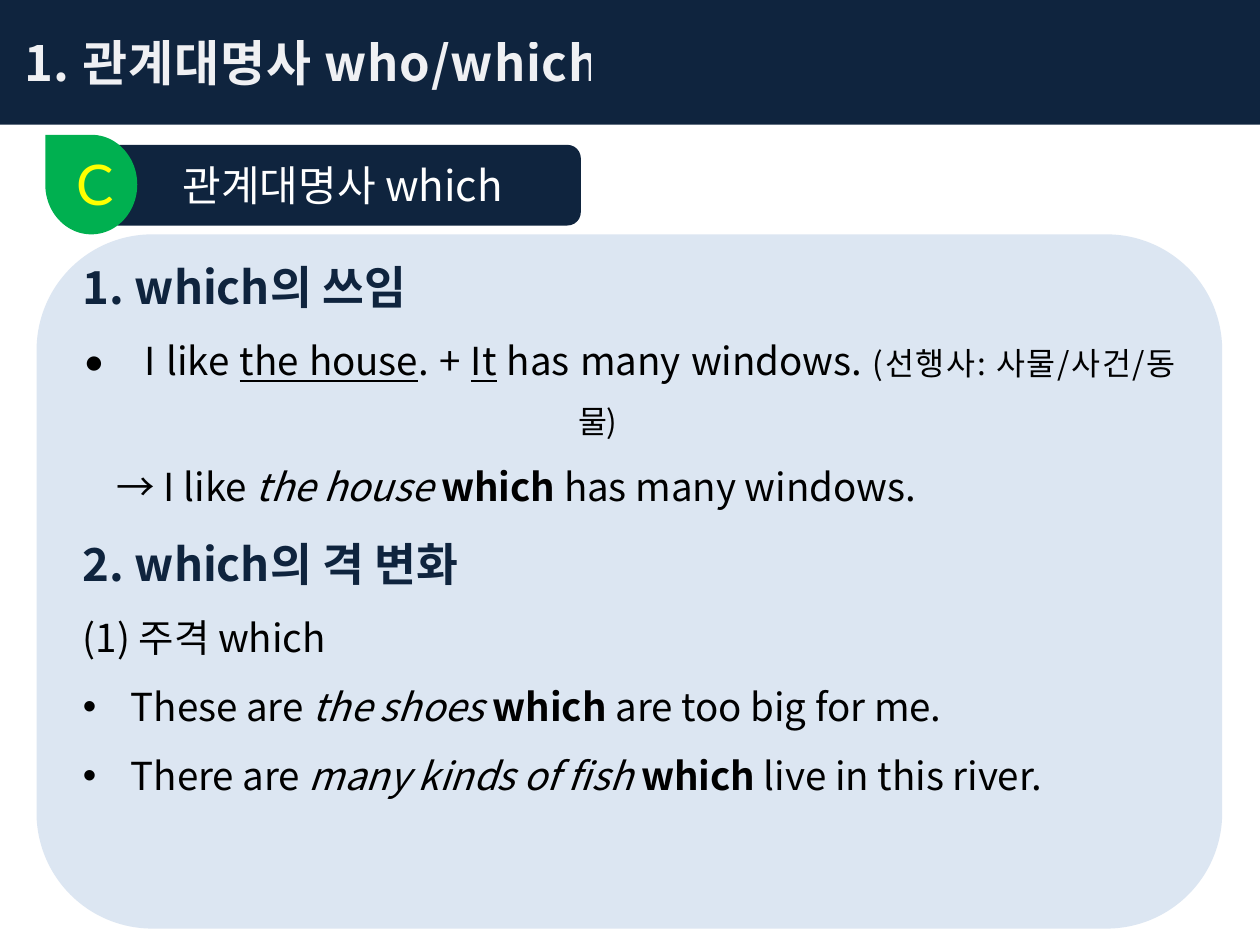
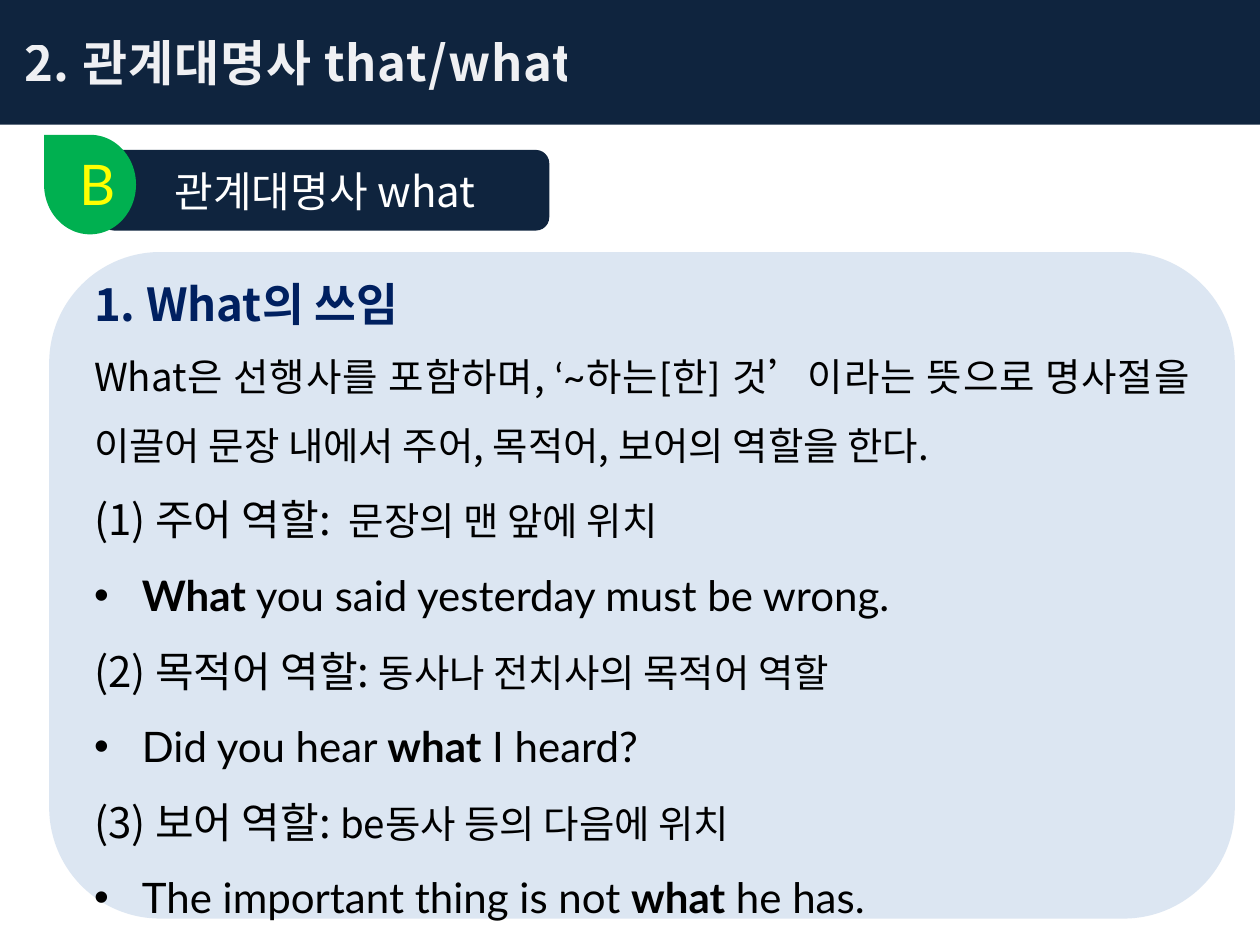
from lxml import etree
from pptx import Presentation
from pptx.dml.color import RGBColor
from pptx.enum.shapes import MSO_SHAPE
from pptx.enum.text import MSO_ANCHOR, PP_ALIGN
from pptx.oxml.ns import qn
from pptx.util import Inches, Pt

RECTANGLE = MSO_SHAPE.RECTANGLE
ROUNDED = MSO_SHAPE.FLOWCHART_ALTERNATE_PROCESS
TEARDROP = MSO_SHAPE.TEAR
MIDDLE = MSO_ANCHOR.MIDDLE
LEFT, CENTER, JUSTIFY = PP_ALIGN.LEFT, PP_ALIGN.CENTER, PP_ALIGN.JUSTIFY

KOREAN_FONT, LATIN_FONT = "Noto Sans CJK KR", "Lato"
NAVY, HEADING_BLUE, PANEL_BLUE = "0F243E", "002060", "DCE6F2"
GREEN, YELLOW, WHITE, BLACK = "00B050", "FFFF00", "FFFFFF", "000000"
TITLE_WHITE, TITLE_OUTLINE = "FCFCFD", "101A26"

BOLD, ITALIC, UNDERLINE = {"bold": True}, {"italic": True}, {"underline": True}
LATIN = {"font": LATIN_FONT}
LATIN_BOLD = {**LATIN, **BOLD}


def rgb(value):
    return RGBColor.from_string(value)


def add_alpha(solid_fill, percent):
    etree.SubElement(solid_fill[0], qn("a:alpha"), val=str(percent * 1000))


class LessonDeck:
    """Holds the lesson style and the slide being built."""

    def __init__(self):
        self.presentation = Presentation()
        self.presentation.slide_width = Inches(10)
        self.presentation.slide_height = Inches(7.5)
        self.slide = None

    def new_slide(self):
        layout = self.presentation.slide_layouts[6]
        self.slide = self.presentation.slides.add_slide(layout)

    def shape(self, kind, box, color):
        shape = self.slide.shapes.add_shape(kind, *map(Inches, box))
        shape.shadow.inherit = False
        shape.fill.solid()
        shape.fill.fore_color.rgb = rgb(color)
        shape.line.fill.background()
        shape.text_frame.word_wrap = True
        shape.text_frame.vertical_anchor = MIDDLE
        return shape

    def run(self, paragraph, text, size, color=BLACK, font=KOREAN_FONT,
            bold=False, italic=False, underline=False, spacing=0):
        run = paragraph.add_run()
        run.text = text
        run.font.size = Pt(size)
        run.font.color.rgb = rgb(color)
        run.font.name = font
        run.font.bold = bold
        run.font.italic = italic
        run.font.underline = underline
        properties = run.font._element
        etree.SubElement(properties, qn("a:ea"), typeface=KOREAN_FONT)
        if spacing:
            properties.set("spc", str(int(spacing * 100)))
        return run

    def title(self, text):
        band = self.shape(RECTANGLE, (0, 0, 10, 0.99), NAVY)
        paragraph = band.text_frame.paragraphs[0]
        paragraph.alignment = LEFT
        run = self.run(paragraph, text, 28, TITLE_WHITE, bold=True, spacing=0.5)
        properties = run.font._element
        add_alpha(properties.find(qn("a:solidFill")), 95)
        outline = etree.Element(qn("a:ln"), w=str(Pt(1.06)))
        fill = etree.SubElement(outline, qn("a:solidFill"))
        etree.SubElement(fill, qn("a:srgbClr"), val=TITLE_OUTLINE)
        add_alpha(fill, 6)
        properties.insert(0, outline)

    def section(self, text, box):
        label = self.shape(ROUNDED, box, NAVY)
        paragraph = label.text_frame.paragraphs[0]
        paragraph.alignment = CENTER
        self.run(paragraph, text, 24, WHITE)

    def badge(self, letter, drop_left, letter_left):
        drop = self.shape(TEARDROP, (drop_left, 1.1, 0.79, 0.73), GREEN)
        drop.rotation = 270
        box = self.slide.shapes.add_textbox(
            *map(Inches, (letter_left, 1.14, 0.47, 0.64)))
        box.text_frame.word_wrap = True
        self.run(box.text_frame.paragraphs[0], letter, 32, YELLOW, LATIN_FONT)

    def panel(self, box, lines, bottom_inset=0.05):
        """Each line is (paragraph options, list of (text, run options))."""
        panel = self.shape(ROUNDED, box, PANEL_BLUE)
        frame = panel.text_frame
        frame.margin_bottom = Inches(bottom_inset)
        for index, (options, runs) in enumerate(lines):
            paragraph = frame.add_paragraph() if index else frame.paragraphs[0]
            self.format_paragraph(paragraph, **options)
            for text, style in runs:
                self.run(paragraph, text, **style)

    def format_paragraph(self, paragraph, alignment=JUSTIFY, margin=0,
                         hanging=0, bullet=False):
        paragraph.alignment = alignment
        paragraph.line_spacing = 1.5
        properties = paragraph._p.get_or_add_pPr()
        properties.set("marL", str(Inches(margin)))
        properties.set("indent", str(-Inches(hanging)))
        if bullet:
            etree.SubElement(properties, qn("a:buFont"), typeface="Arial")
            etree.SubElement(properties, qn("a:buChar"), char="•")
        else:
            etree.SubElement(properties, qn("a:buNone"))


def line(size, *parts, **options):
    """Parts are plain strings or (text, run options) pairs."""
    pairs = [(part, {}) if isinstance(part, str) else part for part in parts]
    return options, [(text, {"size": size, **style}) for text, style in pairs]


def heading(text, color):
    return line(26, (text, {"color": color, "bold": True}))


def bullet(size, *parts, alignment=JUSTIFY):
    return line(size, *parts, alignment=alignment, margin=0.38, hanging=0.38,
                bullet=True)


def role(name, explanation, gap=0):
    parts = [name + ":", (" ", {"spacing": gap}), (explanation, {"size": 22})]
    return line(24, *parts, alignment=LEFT)


def latin_example(before, pronoun, after):
    parts = [(before, LATIN), (pronoun, LATIN_BOLD), (after, LATIN)]
    return bullet(24, *[part for part in parts if part[0]], alignment=LEFT)


def build_which(deck):
    deck.new_slide()
    deck.title(" 1. 관계대명사 who/which")
    deck.panel((0.29, 1.86, 9.41, 5.51), [
        heading("1. which의 쓰임", NAVY),
        line(22, ("•", {**LATIN, "spacing": 8}), (" ", {**LATIN, "spacing": 8}),
             "I like ", ("the house", UNDERLINE), ". + ", ("It", UNDERLINE),
             " has many windows. ", ("(선행사: 사물/사건/동물)", {"size": 18}),
             margin=3.93, hanging=3.93),
        line(22, "→ I like ", ("the house ", ITALIC), ("which", BOLD),
             " has many windows.", margin=0.27),
        heading("2. which의 격 변화", NAVY),
        line(22, "(1) 주격 which"),
        bullet(22, "These are ", ("the shoes ", ITALIC), ("which ", BOLD),
               "are too big for me."),
        bullet(22, "There are ", ("many kinds of fish ", ITALIC),
               ("which", BOLD), " live in this river."),
    ], bottom_inset=1.1)
    deck.section("관계대명사 which", (0.83, 1.15, 3.78, 0.64))
    deck.badge("C", 0.33, 0.51)


def build_what(deck):
    deck.new_slide()
    deck.title(" 2. 관계대명사 that/what")
    deck.panel((0.39, 2, 9.41, 5.29), [
        heading("1. What의 쓰임", HEADING_BLUE),
        line(22, "What은 선행사를 포함하며, ", ("‘~하는[한] 것’", LATIN),
             "이라는 뜻으로 명사절을 이끌어 문장 내에서 주어, 목적어, "
             "보어의 역할을 한다."),
        role("(1) 주어 역할", "문장의 맨 앞에 위치", gap=5),
        latin_example("", "What", " you said yesterday must be wrong."),
        role("(2) 목적어 역할", "동사나 전치사의 목적어 역할"),
        latin_example("Did you hear ", "what", " I heard?"),
        role("(3) 보어 역할", "be동사 등의 다음에 위치"),
        latin_example("The important thing is not ", "what", " he has."),
    ])
    deck.section("관계대명사 what", (0.8, 1.19, 3.56, 0.64))
    deck.badge("B", 0.32, 0.53)


def main():
    deck = LessonDeck()
    build_which(deck)
    build_what(deck)
    deck.presentation.save("out.pptx")


if __name__ == "__main__":
    main()
